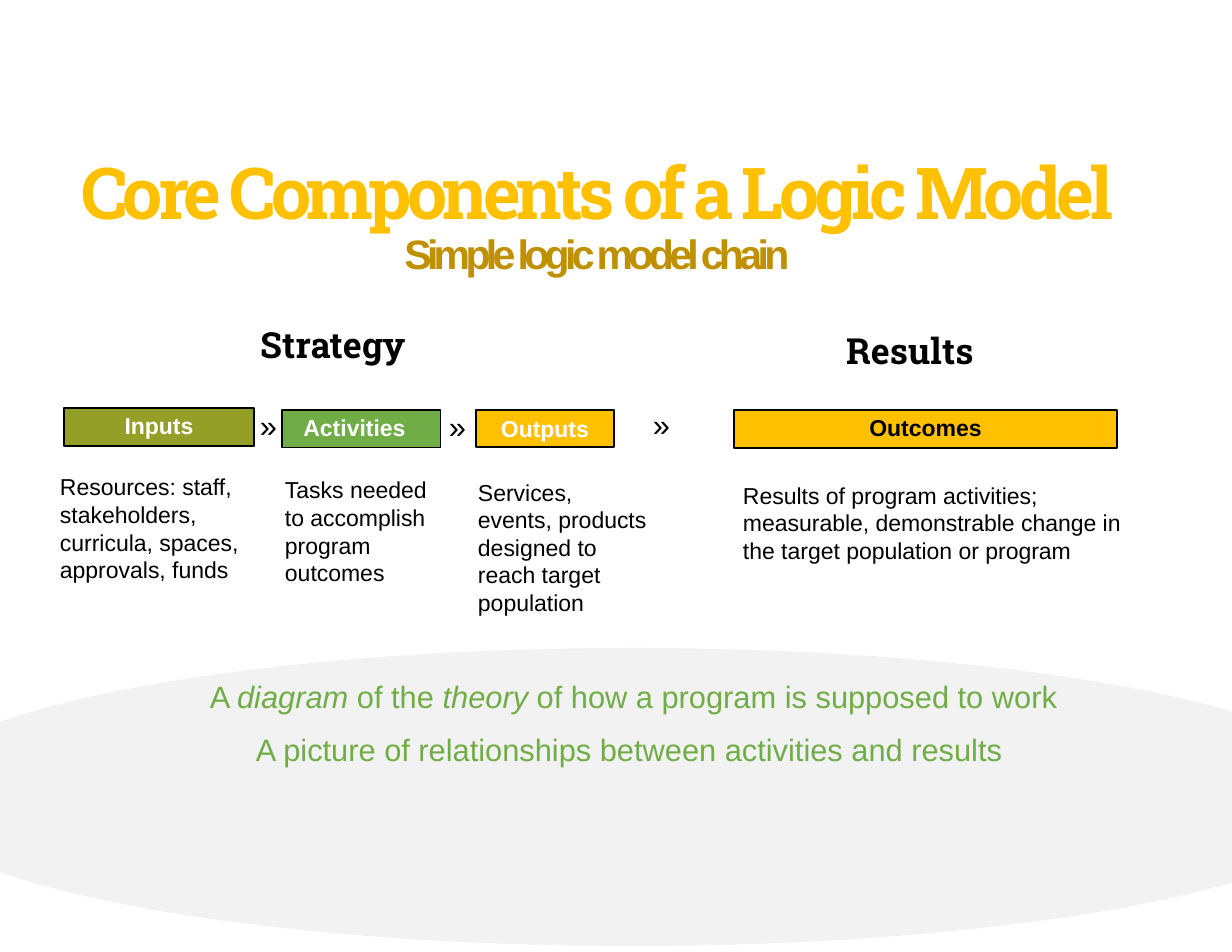
from pptx import Presentation
from pptx.dml.color import RGBColor
from pptx.enum.shapes import MSO_SHAPE as SHAPE
from pptx.enum.text import MSO_ANCHOR as ANCHOR, MSO_AUTO_SIZE as AUTO, PP_ALIGN as ALIGN
from pptx.util import Emu, Pt

PX = 914400 / 112
SLAB, SANS = "Roboto Slab", "Arial"
BLACK, WHITE, GREEN, GOLD = "000000", "FFFFFF", "70AD47", "FFC000"
PAD_X, PAD_Y = 9, 4

# label, box, fill, text colour, line width, extra right inset
STAGES = [
    ("Inputs", (64, 408, 190, 38), "939F26", WHITE, 1, 0),
    ("Outputs", (476, 410, 138, 37), GOLD, WHITE, 1, 0),
    ("Outcomes", (734, 410, 383, 38), GOLD, BLACK, 1, 0),
    ("Activities", (282, 410, 159, 38), GREEN, WHITE, 0.75, 14),
]
CHEVRONS = [(251, 403, 26, 47), (644, 402, 52, 46), (441, 404, 17, 47)]
HEADINGS = [
    ("Strategy", (171, 319, 324, 53)),
    ("Results", (674, 325, 472, 53)),
]
DESCRIPTIONS = [
    ("Resources: staff, stakeholders, curricula, spaces, approvals, funds",
     (51, 469, 207, 121)),
    ("Tasks needed to accomplish program outcomes", (276, 472, 176, 159)),
    ("Services, events, products designed to reach target population",
     (469, 474, 187, 187)),
    ("Results of program activities; measurable, demonstrable change "
     "in the target population or program", (734, 477, 396, 131)),
]
SUMMARY = [
    [("A ", False), ("diagram", True), (" of the ", False), ("theory", True),
     (" of how a program is supposed to work", False)],
    [("A picture of relationships between activities and results ", False)],
]


def px(n):
    return Emu(round(n * PX))


def color(value):
    return RGBColor.from_string(value)


def add_run(p, text, size, fill, font=SANS, bold=False, italic=False):
    r = p.add_run()
    r.text = text
    f = r.font
    f.name, f.size, f.bold, f.italic = font, Pt(size), bold, italic
    f.color.rgb = color(fill)
    return r


def set_frame(tf, anchor=ANCHOR.TOP, extra_right=0):
    tf.word_wrap = True
    tf.auto_size = AUTO.NONE
    tf.vertical_anchor = anchor
    tf.margin_left = px(PAD_X)
    tf.margin_right = px(PAD_X + extra_right)
    tf.margin_top = tf.margin_bottom = px(PAD_Y)


def add_shape(s, kind, box, fill):
    sp = s.shapes.add_shape(kind, *map(px, box))
    sp.shadow.inherit = False
    sp.fill.solid()
    sp.fill.fore_color.rgb = color(fill)
    return sp


def add_frame(s, box):
    tf = s.shapes.add_textbox(*map(px, box)).text_frame
    set_frame(tf)
    return tf


def add_text(s, text, box, size, font=SANS, bold=False, align=ALIGN.LEFT):
    p = add_frame(s, box).paragraphs[0]
    p.alignment = align
    add_run(p, text, size, BLACK, font, bold)


def add_stage(s, label, box, fill, text_fill, line_width, extra_right):
    sp = add_shape(s, SHAPE.RECTANGLE, box, fill)
    sp.line.color.rgb = color(BLACK)
    sp.line.width = Pt(line_width)
    set_frame(sp.text_frame, extra_right=extra_right)
    p = sp.text_frame.paragraphs[0]
    p.alignment = ALIGN.CENTER
    add_run(p, label, 14.8, text_fill, bold=True)


def add_summary(s):
    ellipse = add_shape(s, SHAPE.OVAL, (-100, 648, 1465, 298), "F2F2F2")
    ellipse.line.fill.background()
    tf = add_frame(s, (190, 674, 887, 103))
    for i, runs in enumerate(SUMMARY):
        p = tf.add_paragraph() if i else tf.paragraphs[0]
        p.alignment = ALIGN.CENTER
        if i:
            p.space_before = Pt(9.9)
        for text, italic in runs:
            add_run(p, text, 19.8, GREEN, italic=italic)


def set_title(s):
    title = s.shapes.title
    title.left, title.top, title.width, title.height = map(px, (50, 151, 1094, 134))
    set_frame(title.text_frame, ANCHOR.MIDDLE)
    p = title.text_frame.paragraphs[0]
    p.alignment = ALIGN.CENTER
    p.line_spacing = 0.9
    main_run = add_run(p, "Core Components of a Logic Model", 46, GOLD, SLAB, True)
    p.add_line_break()
    sub_run = add_run(p, "Simple logic model chain", 26.4, "BF9000", bold=True)
    for r in (main_run, sub_run):
        r._r.get_or_add_rPr().set("spc", "-300")


def main():
    prs = Presentation()
    prs.slide_width, prs.slide_height = px(1232), px(952)
    s = prs.slides.add_slide(prs.slide_layouts[5])
    add_summary(s)
    set_title(s)
    for text, box in HEADINGS:
        add_text(s, text, box, 23.1, SLAB, True, ALIGN.CENTER)
    for stage in STAGES:
        add_stage(s, *stage)
    for box in CHEVRONS:
        add_text(s, "»", box, 19.8)
    for text, box in DESCRIPTIONS:
        add_text(s, text, box, 14.8)
    prs.save("out.pptx")


if __name__ == "__main__":
    main()
